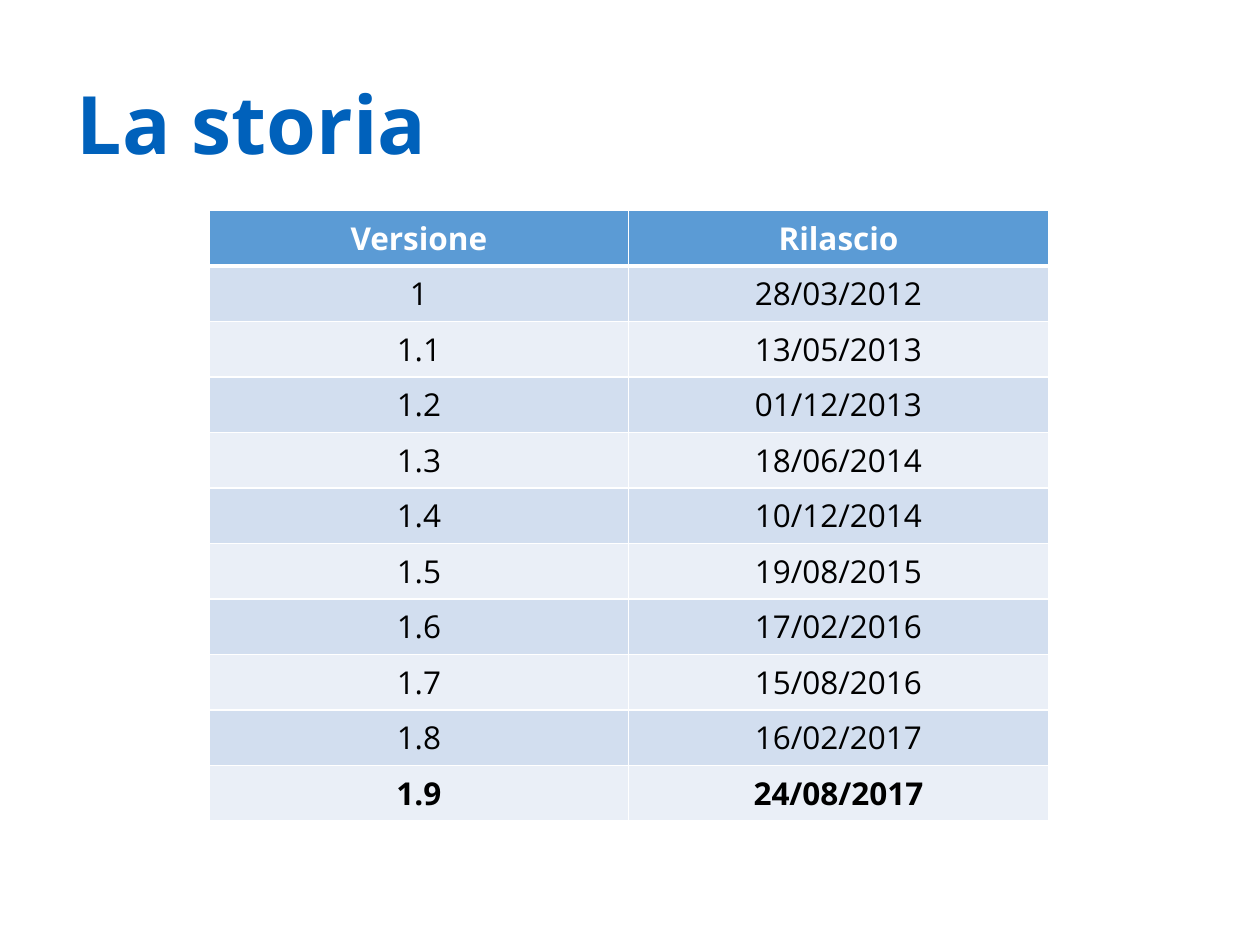
"""Build the slide "La storia" with its table of releases."""
from typing import NamedTuple

from lxml import etree
from pptx import Presentation
from pptx.dml.color import RGBColor
from pptx.enum.text import MSO_ANCHOR, MSO_AUTO_SIZE, PP_ALIGN
from pptx.oxml.ns import qn
from pptx.util import Inches, Pt

LEFT, CENTER = PP_ALIGN.LEFT, PP_ALIGN.CENTER
MIDDLE, TOP = MSO_ANCHOR.MIDDLE, MSO_ANCHOR.TOP
NO_AUTOFIT = MSO_AUTO_SIZE.NONE
FONT = "Open Sans"
WHITE, BLACK, TITLE_BLUE = "FFFFFF", "000000", "0061BB"
HEADER_FILL, BAND_FILLS = "5B9BD5", ("D2DEEF", "EAEFF7")
COLUMN_WIDTH, ROW_HEIGHT = 3.33, 0.41


class Release(NamedTuple):
    version: str
    date: str


HEADER = Release("Versione", "Rilascio")
RELEASES = [
    Release("1", "28/03/2012"),
    Release("1.1", "13/05/2013"),
    Release("1.2", "01/12/2013"),
    Release("1.3", "18/06/2014"),
    Release("1.4", "10/12/2014"),
    Release("1.5", "19/08/2015"),
    Release("1.6", "17/02/2016"),
    Release("1.7", "15/08/2016"),
    Release("1.8", "16/02/2017"),
    Release("1.9", "24/08/2017"),
]


def rgb(value: str) -> RGBColor:
    return RGBColor.from_string(value)


def write(frame, text: str, size: float, color: str, bold: bool, align) -> None:
    paragraph = frame.paragraphs[0]
    paragraph.alignment = align
    run = paragraph.add_run()
    run.text = text
    for name, value in {"name": FONT, "size": Pt(size), "bold": bold}.items():
        setattr(run.font, name, value)
    run.font.color.rgb = rgb(color)


def set_borders(cell, widths: dict[str, float]) -> None:
    properties = cell._tc.get_or_add_tcPr()
    for position, (side, width) in enumerate(widths.items()):
        line = etree.Element(qn(f"a:ln{side}"), w=str(Pt(width)))
        fill = etree.SubElement(line, qn("a:solidFill"))
        etree.SubElement(fill, qn("a:srgbClr"), val=WHITE)
        properties.insert(position, line)


def add_title(slide, text: str) -> None:
    title = slide.shapes.title
    box = {"left": 0.51, "top": 0.4, "width": 8.97, "height": 0.99}
    for name, value in box.items():
        setattr(title, name, Inches(value))
    frame = title.text_frame
    frame.auto_size = NO_AUTOFIT
    frame.vertical_anchor = MIDDLE
    frame.paragraphs[0].line_spacing = 1.2
    write(frame, text, 46, TITLE_BLUE, True, LEFT)


def add_releases(slide, releases: list[Release]) -> None:
    rows = [HEADER, *releases]
    columns = len(HEADER)
    table = slide.shapes.add_table(
        len(rows), columns, Inches(1.66), Inches(1.67),
        Inches(COLUMN_WIDTH * columns), Inches(ROW_HEIGHT * len(rows)),
    ).table
    for row, release in enumerate(rows):
        is_header = row == 0
        fill = HEADER_FILL if is_header else BAND_FILLS[(row - 1) % 2]
        color = WHITE if is_header else BLACK
        bold = is_header or release == releases[-1]
        borders = {"L": 1, "R": 1, "T": 3 if row == 1 else 1, "B": 3 if is_header else 1}
        for column, text in enumerate(release):
            cell = table.cell(row, column)
            cell.vertical_anchor = TOP
            cell.fill.solid()
            cell.fill.fore_color.rgb = rgb(fill)
            set_borders(cell, borders)
            write(cell.text_frame, text, 18, color, bold, CENTER)


def main() -> None:
    presentation = Presentation()
    presentation.slide_width = Inches(10)
    presentation.slide_height = Inches(7.5)
    slide = presentation.slides.add_slide(presentation.slide_layouts[5])
    add_title(slide, "La storia")
    add_releases(slide, RELEASES)
    presentation.save("out.pptx")


if __name__ == "__main__":
    main()
